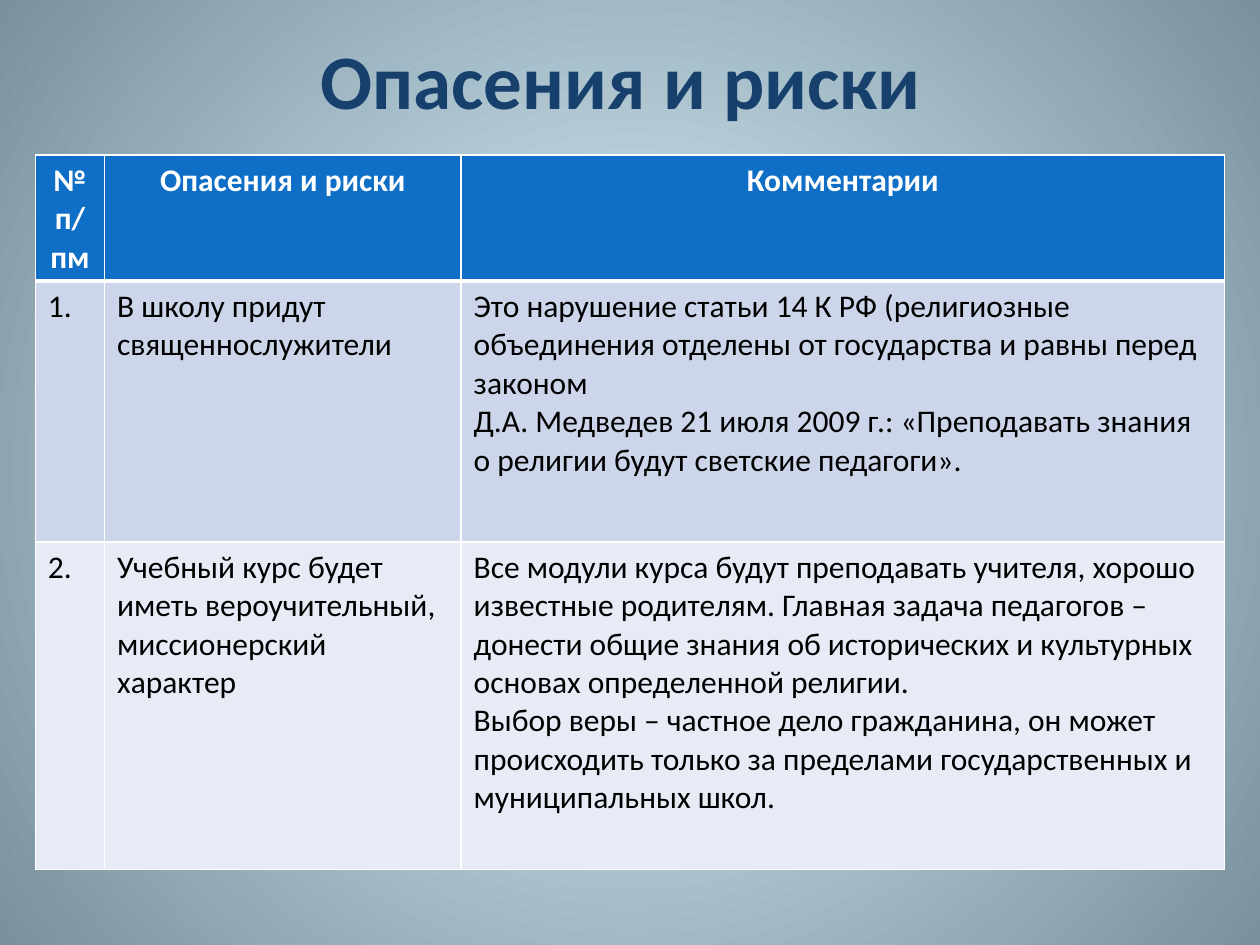
import pptx
import pptx.util
import pptx.dml.color
import pptx.enum.text
import pptx.oxml
import pptx.oxml.ns

Inches, Pt = pptx.util.Inches, pptx.util.Pt
RGBColor = pptx.dml.color.RGBColor
CENTER = pptx.enum.text.PP_ALIGN.CENTER
LEFT = pptx.enum.text.PP_ALIGN.LEFT

FONT = "Calibri"
GLOW = RGBColor(0xDE, 0xF4, 0xFF)
SLATE = RGBColor(0x79, 0x91, 0x9C)
NAVY = RGBColor(0x17, 0x40, 0x6D)
BLUE = RGBColor(0x0F, 0x6F, 0xC6)
BANDS = [RGBColor(0xCC, 0xD5, 0xEA), RGBColor(0xE7, 0xEB, 0xF5)]
WHITE = RGBColor(0xFF, 0xFF, 0xFF)
BLACK = RGBColor(0, 0, 0)

COLS = [0.55, 2.83, 6.06]
ROWS = [0.94, 2.07, 2.6]
CELLS = [
    ["№ п/пм", "Опасения и риски", "Комментарии"],
    ["1.", "В школу придут священнослужители",
     "Это нарушение статьи 14 К РФ (религиозные объединения отделены "
     "от государства и равны перед законом\n"
     "Д.А. Медведев 21 июля 2009 г.: «Преподавать знания о религии "
     "будут светские педагоги»."],
    ["2.", "Учебный курс будет иметь вероучительный, миссионерский характер",
     "Все модули курса будут преподавать учителя, хорошо известные "
     "родителям. Главная задача педагогов – донести общие знания об "
     "исторических и культурных основах определенной религии.\n"
     "Выбор веры – частное дело гражданина, он может происходить только "
     "за пределами государственных и муниципальных школ."],
]


def write(frame, text, size, color, bold, align):
    """Fill a text frame and format all its runs."""
    frame.text = text
    for para in frame.paragraphs:
        para.alignment = align
        for run in para.runs:
            font = run.font
            font.name, font.size, font.bold = FONT, Pt(size), bold
            font.color.rgb = color


def paint_back(slide):
    """Give the slide a round gradient from its centre."""
    fill = slide.background.fill
    fill.gradient()
    for stop, color, place in zip(fill.gradient_stops, (GLOW, SLATE), (0, 1)):
        stop.color.rgb = color
        stop.position = place
    grad = slide.background._cSld.find(".//" + pptx.oxml.ns.qn("a:gradFill"))
    grad.replace(grad.find(pptx.oxml.ns.qn("a:lin")), pptx.oxml.parse_xml(
        f'<a:path {pptx.oxml.ns.nsdecls("a")} path="circle">'
        '<a:fillToRect l="50000" t="50000" r="50000" b="50000"/></a:path>'))


def add_title(slide, left, top, width, height):
    """Place the centred heading in its box."""
    box = slide.shapes.add_textbox(*map(Inches, (left, top, width, height)))
    frame = box.text_frame
    frame.word_wrap = True
    frame.vertical_anchor = pptx.enum.text.MSO_ANCHOR.MIDDLE
    write(frame, "Опасения и риски", 44, NAVY, True, CENTER)


def add_edges(cell, base):
    """Draw white borders round a cell, with its own base width."""
    props = cell._tc.get_or_add_tcPr()
    for spot, (side, width) in enumerate(zip("LRTB", (1, 1, 1, base))):
        props.insert(spot, pptx.oxml.parse_xml(
            f'<a:ln{side} {pptx.oxml.ns.nsdecls("a")} w="{Pt(width)}">'
            f'<a:solidFill><a:srgbClr val="{WHITE}"/></a:solidFill></a:ln{side}>'))


def add_grid(slide, left, top, width, height):
    """Place the table of fears and comments in its box."""
    table = slide.shapes.add_table(
        len(ROWS), len(COLS), *map(Inches, (left, top, width, height))).table
    for col, size in zip(table.columns, COLS):
        col.width = Inches(size)
    for row, size in zip(table.rows, ROWS):
        row.height = Inches(size)
    for r, texts in enumerate(CELLS):
        head = r == 0
        for c, text in enumerate(texts):
            cell = table.cell(r, c)
            cell.fill.solid()
            cell.fill.fore_color.rgb = BLUE if head else BANDS[r - 1]
            add_edges(cell, 3 if head else 1)
            write(cell.text_frame, text, 18, WHITE if head else BLACK,
                  head, CENTER if head else LEFT)


def main():
    """Build and save the slide."""
    deck = pptx.Presentation()
    deck.slide_width, deck.slide_height = Inches(10), Inches(7.5)
    slide = deck.slides.add_slide(deck.slide_layouts[6])
    paint_back(slide)
    add_title(slide, 0.43, 0, 9, 1.25)
    add_grid(slide, 0.28, 1.23, sum(COLS), sum(ROWS))
    deck.save("out.pptx")


if __name__ == "__main__":
    main()
